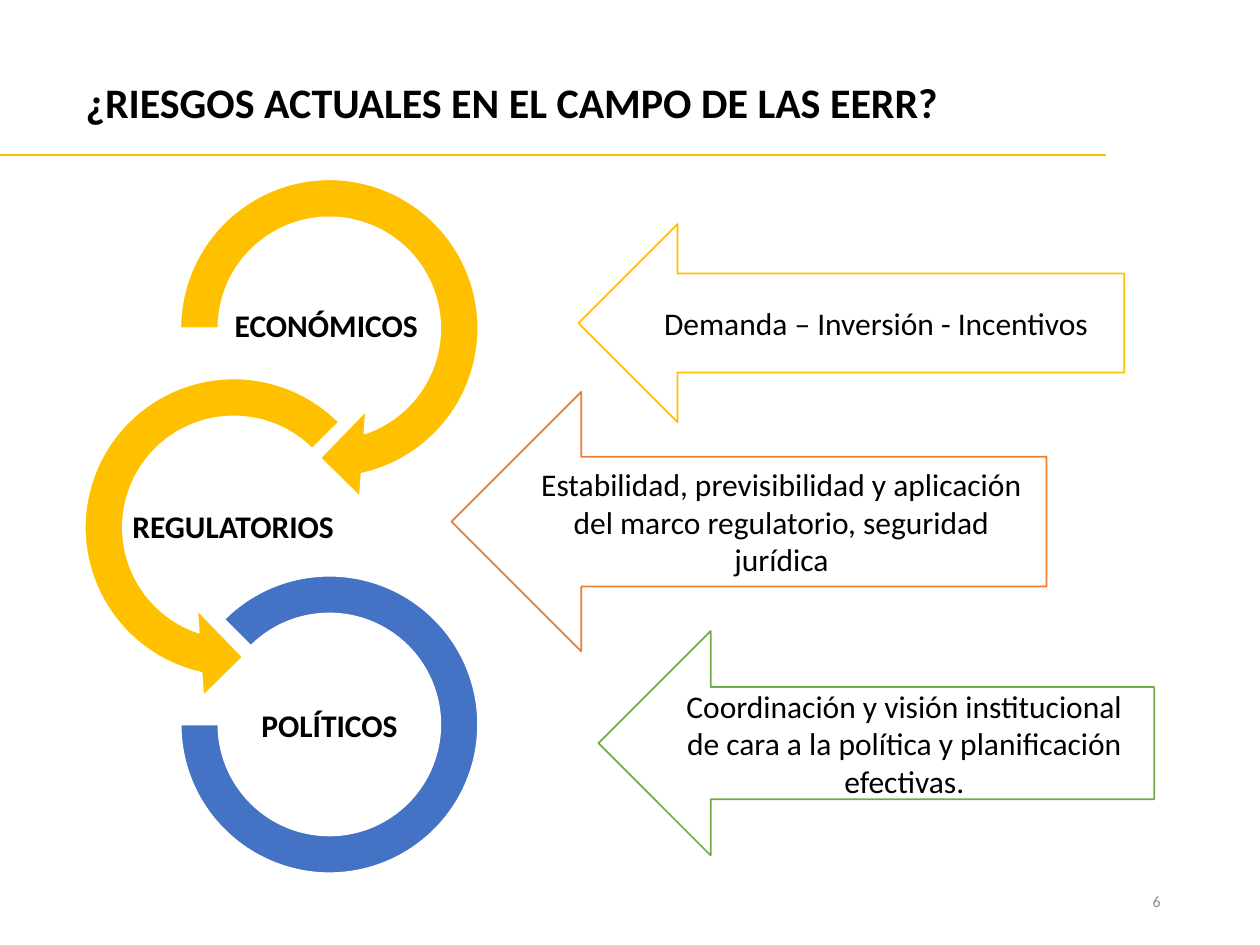
from pptx import Presentation
from pptx.dml.color import RGBColor
from pptx.enum.shapes import MSO_CONNECTOR as Link, MSO_SHAPE as Form
from pptx.enum.text import MSO_ANCHOR as Anchor, PP_ALIGN as Align
from pptx.oxml.ns import qn
from pptx.util import Pt
from lxml.etree import SubElement

GOLD, BLUE, RUST, GREEN = "FFC000", "4472C4", "ED7D31", "70AD47"
WHITE, BLACK, GRAY = "FFFFFF", "000000", "8C8C8C"


def color(code):
    return RGBColor.from_string(code)


class Deck:
    font = "Calibri"

    def __init__(self, slide):
        self.shapes = slide.shapes

    def label(self, shape, words, size=18, bold=False, ink=BLACK,
              align=Align.CENTER, pad=None, space=None):
        frame = shape.text_frame
        style = {"word_wrap": True, "vertical_anchor": Anchor.MIDDLE}
        if pad is not None:
            for side in ("left", "top", "right", "bottom"):
                style["margin_" + side] = Pt(pad)
        para = frame.paragraphs[0]
        para.text = words
        looks = {"name": self.font, "size": Pt(size), "bold": bold}
        lines = {"alignment": align, "line_spacing": space}
        for item, values in ((frame, style), (para, lines), (para.font, looks)):
            for key, value in values.items():
                setattr(item, key, value)
        para.font.color.rgb = color(ink)

    def text(self, box, words, **style):
        self.label(self.shapes.add_textbox(*map(Pt, box)), words, **style)

    def shape(self, form, box, fill, edge, tune=()):
        shape = self.shapes.add_shape(form, *map(Pt, box))
        shape.shadow.inherit = False
        shape.fill.solid()
        shape.fill.fore_color.rgb = color(fill)
        shape.line.color.rgb = color(edge)
        shape.line.width = Pt(1)
        for spot, value in enumerate(tune):
            shape.adjustments[spot] = value
        return shape

    def arrow(self, box, edge, words):
        self.label(self.shape(Form.LEFT_ARROW, box, WHITE, edge), words)

    def rule(self, start, end, ink, width):
        line = self.shapes.add_connector(Link.STRAIGHT, *map(Pt, start + end))
        line.line.color.rgb = color(ink)
        line.line.width = Pt(width)
        SubElement(line._element.spPr, qn("a:effectLst"))


RISKS = [
    (Form.CIRCULAR_ARROW, (89.2, 88.6, 198, 198), GOLD,
     (0.11, 11.42, 45, 108, 0.125), "ECONÓMICOS", (130.3, 159.8, 112.3, 54.7),
     (330.6, 128, 311.8, 113.2), GOLD, "Demanda – Inversión - Incentivos"),
    (Form.LEFT_CIRCULAR_ARROW, (34.6, 202.4, 198, 198), GOLD,
     (0.11, 11.42, 63, 189, 0.125), "REGULATORIOS", (63.4, 274.3, 139.7, 54.7),
     (258, 223.9, 340, 148.3), RUST,
     "Estabilidad, previsibilidad y aplicación del marco regulatorio, "
     "seguridad jurídica"),
    (Form.BLOCK_ARC, (103.2, 329, 170, 170), BLUE,
     (135, 108, 0.127), "POLÍTICOS", (133.2, 388.1, 110.2, 54.7),
     (342, 360.6, 317.5, 128.2), GREEN,
     "Coordinación y visión institucional de cara a la política y "
     "planificación efectivas."),
]


def main():
    show = Presentation()
    show.slide_width, show.slide_height = Pt(720), Pt(540)
    deck = Deck(show.slides.add_slide(show.slide_layouts[6]))
    deck.text((508.3, 500.4, 162, 28.8), "6", size=9, ink=GRAY, align=Align.RIGHT)
    for form, ring, fill, tune, name, spot, arrow, edge, words in RISKS:
        deck.shape(form, ring, fill, WHITE, tune)
        deck.text(spot, name, bold=True, pad=0.9, space=0.9)
        deck.arrow(arrow, edge, words)
    deck.text((41.8, 15.1, 539.3, 90), "¿RIESGOS ACTUALES EN EL CAMPO DE LAS EERR?",
              size=24, bold=True, align=Align.LEFT, space=0.9)
    deck.rule((0, 88.6), (632, 88.6), GOLD, 1.5)
    show.save("out.pptx")


if __name__ == "__main__":
    main()
